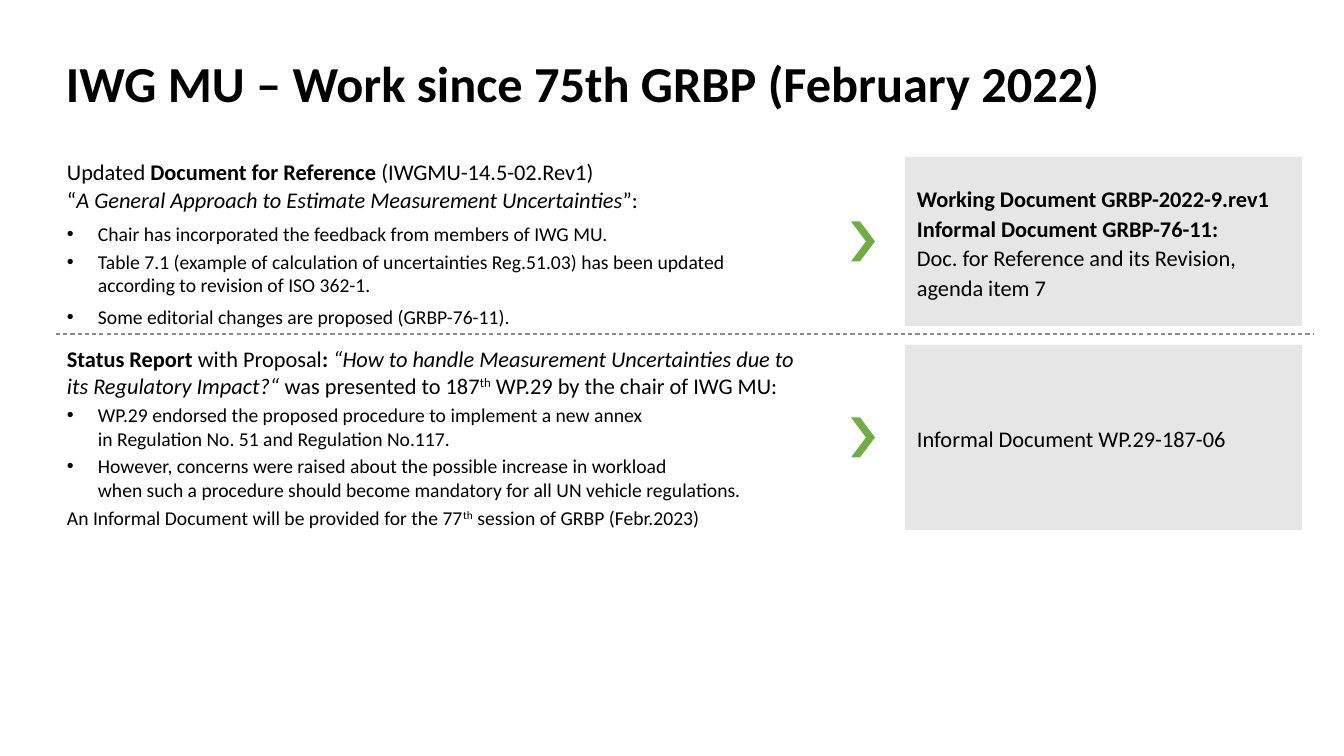
from lxml.etree import SubElement
from pptx import Presentation
from pptx.dml.color import RGBColor
from pptx.enum.dml import MSO_LINE
from pptx.enum.shapes import MSO_CONNECTOR, MSO_SHAPE
from pptx.enum.text import MSO_ANCHOR, PP_ALIGN
from pptx.oxml.ns import qn
from pptx.util import Pt

SCALE = 12192000 / 1344
BLACK = RGBColor(0, 0, 0)
GREEN = RGBColor(0x70, 0xAD, 0x47)
PALE = RGBColor(0xE7, 0xE6, 0xE6)
GREY = RGBColor(0x8C, 0x8C, 0x8C)
FONT = "Calibri"
INDENT = 31


def px(count):
    """Turn pixels into EMU."""
    return round(count * SCALE)


def write(para, text, size=16, bold=False, italic=False, raised=False):
    """Add text to a paragraph, with a line break at each newline."""
    for index, line in enumerate(text.split("\n")):
        if index:
            para.add_line_break()
        if not line:
            continue
        run = para.add_run()
        run.text = line
        font = run.font
        font.name, font.size = FONT, Pt(size)
        font.bold, font.italic = bold, italic
        font.color.rgb = BLACK
        if raised:
            run._r.get_or_add_rPr().set("baseline", "30000")


def bullet(para):
    """Give a paragraph a hanging bullet."""
    props = para._p.get_or_add_pPr()
    props.set("marL", str(px(INDENT)))
    props.set("indent", str(-px(INDENT)))
    SubElement(props, qn("a:buFont"), typeface="Arial")
    SubElement(props, qn("a:buChar"), char="•")


def fill(frame, paras, inset=(0, 0), anchor=MSO_ANCHOR.TOP):
    """Fill a frame with (runs, size, leading, bulleted) paragraphs."""
    frame.word_wrap = True
    frame.vertical_anchor = anchor
    frame.margin_left = frame.margin_right = px(inset[0])
    frame.margin_top = frame.margin_bottom = px(inset[1])
    for index, (runs, size, leading, dotted) in enumerate(paras):
        para = frame.add_paragraph() if index else frame.paragraphs[0]
        para.alignment = PP_ALIGN.LEFT
        para.line_spacing = leading
        if index:
            para.space_before = Pt(3)
        if dotted:
            bullet(para)
        for text, style in runs:
            write(para, text, size=size, bold="b" in style,
                  italic="i" in style, raised="^" in style)


def textbox(slide, box, paras, **layout):
    """Place a text box."""
    shape = slide.shapes.add_textbox(*map(px, box))
    fill(shape.text_frame, paras, **layout)


def arrow(slide, left, middle):
    """Draw a green chevron centred on a height."""
    top = middle - 20
    points = [(0, 0), (9, 0), (24, 20), (9, 40), (0, 40), (15, 20)]
    ends = [(px(left + x), px(top + y)) for x, y in points]
    pen = slide.shapes.build_freeform(*ends[0])
    pen.add_line_segments(ends[1:], close=True)
    shape = pen.convert_to_shape()
    shape.shadow.inherit = False
    shape.fill.solid()
    shape.fill.fore_color.rgb = GREEN
    shape.line.fill.background()


def panel(slide, box, runs):
    """Draw a pale box that names documents."""
    shape = slide.shapes.add_shape(MSO_SHAPE.RECTANGLE, *map(px, box))
    shape.shadow.inherit = False
    shape.fill.solid()
    shape.fill.fore_color.rgb = PALE
    shape.line.fill.background()
    fill(shape.text_frame, [(runs, 16, 1.1, False)], inset=(12, 8),
         anchor=MSO_ANCHOR.MIDDLE)


def topic(slide, box, paras, runs):
    """Place a topic: its text, a chevron and its document panel."""
    left, top, width, height = box
    textbox(slide, (left, top, 731, height), paras)
    arrow(slide, left + 784, top + height / 2)
    panel(slide, (left + 838, top, width - 838, height), runs)


def divide(slide, left, top, width):
    """Draw the dashed rule between topics."""
    rule = slide.shapes.add_connector(
        MSO_CONNECTOR.STRAIGHT, px(left), px(top), px(left + width), px(top))
    rule.line.color.rgb = GREY
    rule.line.width = Pt(0.75)
    rule.line.dash_style = MSO_LINE.DASH
    SubElement(rule._element.spPr, qn("a:effectLst"))


UPDATE = [
    ([("Updated ", ""), ("Document for Reference ", "b"),
      ("(IWGMU-14.5-02.Rev1)\n“", ""),
      ("A General Approach to Estimate Measurement Uncertainties", "i"),
      ("”:", "")], 16, Pt(20), False),
    ([("Chair has incorporated the feedback from members of IWG MU.", "")],
     14, Pt(20), True),
    ([("Table 7.1 (example of calculation of uncertainties Reg.51.03) has "
       "been updated according to revision of ISO 362-1.", "")],
     14, 1.0, True),
    ([("Some editorial changes are proposed (GRBP-76-11).", "")],
     14, Pt(20), True),
]
STATUS = [
    ([("Status Report ", "b"), ("with Proposal", ""), (": ", "b"),
      ("“How to handle Measurement Uncertainties due to its Regulatory "
       "Impact?“ ", "i"),
      ("was presented to 187", ""), ("th", "^"),
      (" WP.29 by the chair of IWG MU:", "")], 16, 1.0, False),
    ([("WP.29 endorsed the proposed procedure to implement a new annex\n"
       "in Regulation No. 51 and Regulation No.117.", "")], 14, 1.0, True),
    ([("However, concerns were raised about the possible increase in "
       "workload\nwhen such a procedure should become mandatory for all UN "
       "vehicle regulations.", "")], 14, 1.0, True),
    ([("An Informal Document will be provided for the 77", ""), ("th", "^"),
      (" session of GRBP (Febr.2023)", "")], 14, 1.0, False),
]
PAPERS = [
    ("Working Document GRBP-2022-9.rev1\nInformal Document GRBP-76-11:\n",
     "b"),
    ("Doc. for Reference and its Revision, agenda item 7", ""),
]


def main():
    """Build and save the slide."""
    deck = Presentation()
    deck.slide_width, deck.slide_height = px(1344), px(756)
    slide = deck.slides.add_slide(deck.slide_layouts[6])
    title = [("IWG MU – Work since 75th GRBP (February 2022)", "b")]
    textbox(slide, (56, 18, 1198, 136), [(title, 36, 0.9, False)],
            inset=(10, 5), anchor=MSO_ANCHOR.MIDDLE)
    topic(slide, (67, 157, 1235, 169), UPDATE, PAPERS)
    divide(slide, 56, 334, 1257)
    topic(slide, (67, 345, 1235, 185), STATUS,
          [("Informal Document WP.29-187-06", "")])
    deck.save("out.pptx")


if __name__ == "__main__":
    main()
